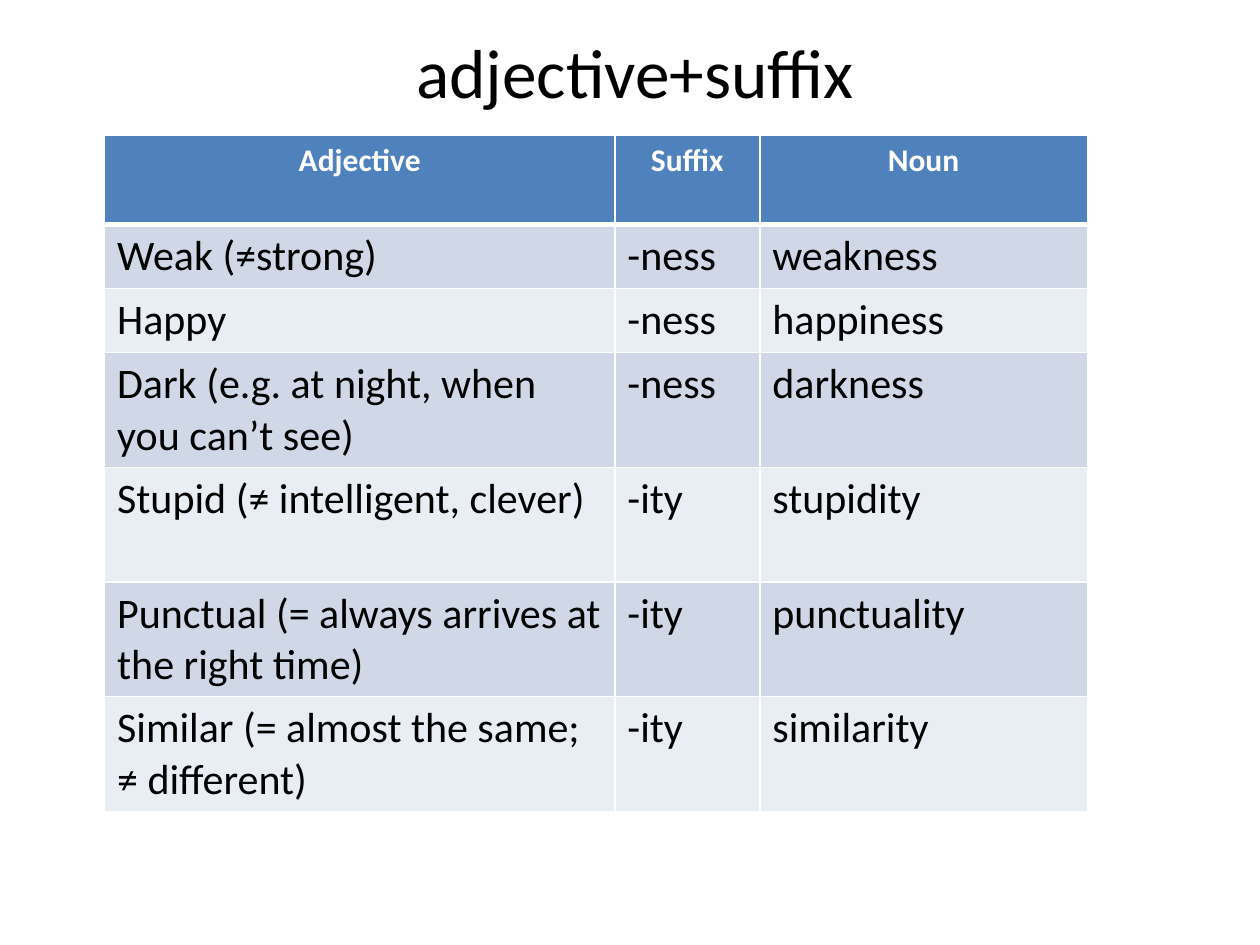
from dataclasses import dataclass

from lxml import etree
from pptx import Presentation
from pptx.dml.color import RGBColor
from pptx.enum.text import MSO_ANCHOR, PP_ALIGN
from pptx.oxml.ns import qn
from pptx.util import Inches, Pt

CENTER, LEFT = PP_ALIGN.CENTER, PP_ALIGN.LEFT
MIDDLE = MSO_ANCHOR.MIDDLE
BLANK_LAYOUT = 6


@dataclass(frozen=True)
class Theme:
    font: str = "Calibri"
    text: str = "000000"
    white: str = "FFFFFF"
    header: str = "4F81BD"
    bands: tuple = ("D0D8E8", "E9EDF4")
    title_size: float = 39.6
    header_size: float = 18
    body_size: float = 24
    border: float = 1
    header_border: float = 3


THEME = Theme()

COLUMN_WIDTHS = (4.05, 1.15, 2.6)
HEADER_HEIGHT, ONE_LINE, TWO_LINES = 0.71, 0.51, 0.91
HEADINGS = ("Adjective", "Suffix", "Noun")
WORDS = (
    (ONE_LINE, ("Weak (≠strong)", "-ness", "weakness")),
    (ONE_LINE, ("Happy", "-ness", "happiness")),
    (TWO_LINES, ("Dark (e.g. at night, when you can’t see)", "-ness", "darkness")),
    (TWO_LINES, ("Stupid (≠ intelligent, clever)", "-ity", "stupidity")),
    (TWO_LINES, ("Punctual (= always arrives at the right time)", "-ity", "punctuality")),
    (TWO_LINES, ("Similar (= almost the same; ≠ different)", "-ity", "similarity")),
)


def write_text(text_frame, text, *, size, color=THEME.text, bold=False, align=LEFT):
    paragraph = text_frame.paragraphs[0]
    paragraph.alignment = align
    run = paragraph.add_run()
    run.text = text
    run.font.name = THEME.font
    run.font.size = Pt(size)
    run.font.bold = bold
    run.font.color.rgb = RGBColor.from_string(color)


def set_borders(cell, widths):
    """Draw white borders; widths are points for left, right, top, bottom."""
    properties = cell._tc.get_or_add_tcPr()
    for index, (side, width) in enumerate(zip("LRTB", widths)):
        line = etree.Element(qn(f"a:ln{side}"), w=str(Pt(width)))
        fill = etree.SubElement(line, qn("a:solidFill"))
        etree.SubElement(fill, qn("a:srgbClr"), val=THEME.white)
        properties.insert(index, line)


def add_title(slide, left, top, width, height):
    box = slide.shapes.add_textbox(Inches(left), Inches(top), Inches(width), Inches(height))
    frame = box.text_frame
    frame.word_wrap = True
    frame.vertical_anchor = MIDDLE
    frame.margin_top = frame.margin_bottom = 0
    write_text(frame, "adjective+suffix", size=THEME.title_size, align=CENTER)


def add_word_table(slide, left, top):
    rows = ((HEADER_HEIGHT, HEADINGS),) + WORDS
    width = sum(COLUMN_WIDTHS)
    height = sum(row_height for row_height, _ in rows)
    table = slide.shapes.add_table(
        len(rows), len(COLUMN_WIDTHS),
        Inches(left), Inches(top), Inches(width), Inches(height),
    ).table
    for column, column_width in zip(table.columns, COLUMN_WIDTHS):
        column.width = Inches(column_width)

    for row_index, (row_height, texts) in enumerate(rows):
        table.rows[row_index].height = Inches(row_height)
        is_header = row_index == 0
        if is_header:
            fill = THEME.header
            style = dict(size=THEME.header_size, color=THEME.white, bold=True, align=CENTER)
        else:
            fill = THEME.bands[(row_index - 1) % 2]
            style = dict(size=THEME.body_size)
        top_border = THEME.header_border if row_index == 1 else THEME.border
        bottom_border = THEME.header_border if is_header else THEME.border
        for column_index, text in enumerate(texts):
            cell = table.cell(row_index, column_index)
            cell.fill.solid()
            cell.fill.fore_color.rgb = RGBColor.from_string(fill)
            set_borders(cell, (THEME.border, THEME.border, top_border, bottom_border))
            write_text(cell.text_frame, text, **style)


def main():
    presentation = Presentation()
    presentation.slide_width, presentation.slide_height = Inches(10), Inches(7.5)
    slide = presentation.slides.add_slide(presentation.slide_layouts[BLANK_LAYOUT])
    add_title(slide, 0.5, 0.21, 9.08, 0.71)
    add_word_table(slide, 0.83, 1.07)
    presentation.save("out.pptx")


if __name__ == "__main__":
    main()
